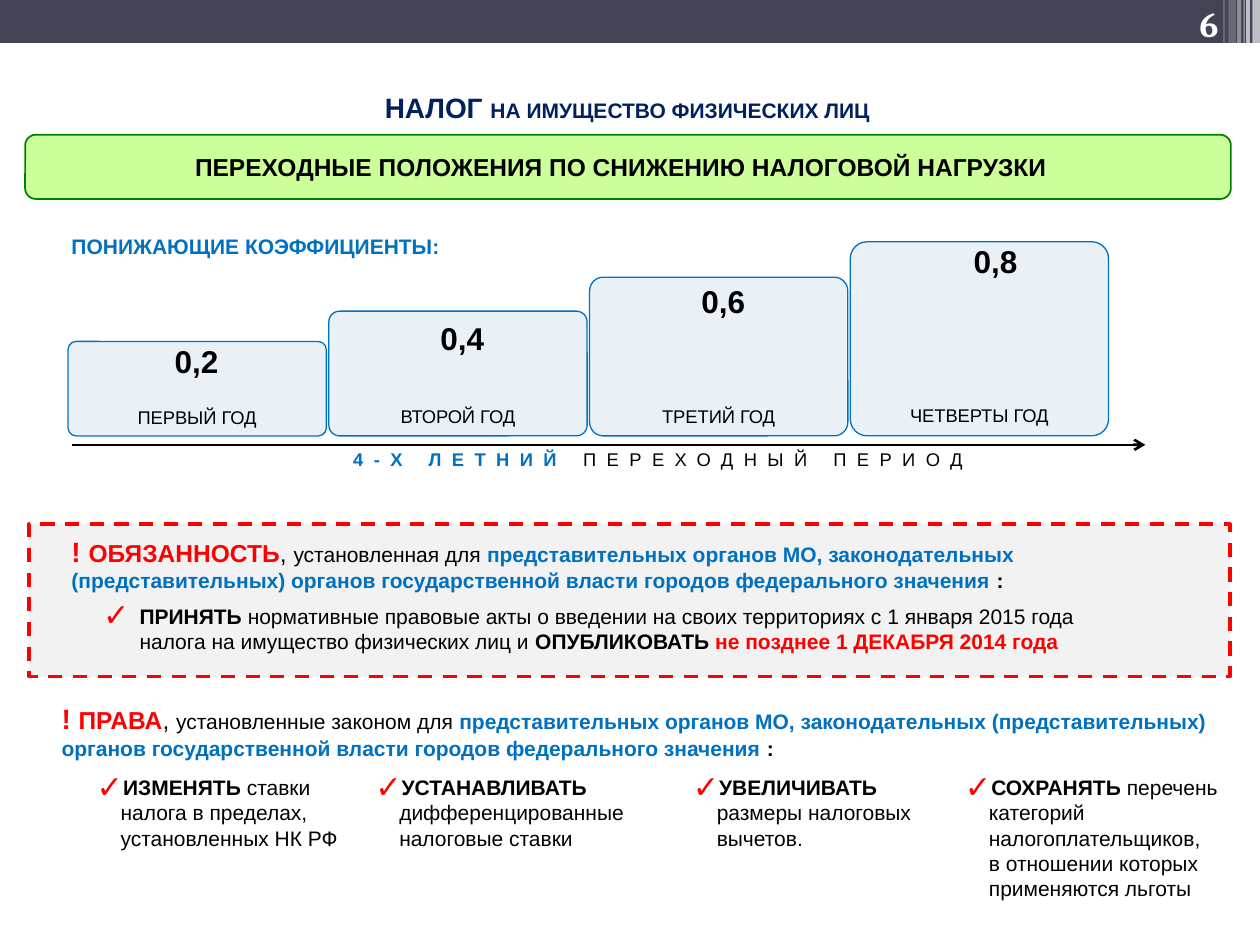
"""Build the slide on transitional property tax rules for individuals."""
from dataclasses import dataclass

from lxml import etree
from pptx import Presentation
from pptx.dml.color import RGBColor
from pptx.enum.dml import MSO_LINE
from pptx.enum.shapes import MSO_CONNECTOR, MSO_SHAPE
from pptx.enum.text import MSO_ANCHOR, MSO_AUTO_SIZE, PP_ALIGN
from pptx.oxml.ns import qn
from pptx.util import Pt

RECT, ROUND = MSO_SHAPE.RECTANGLE, MSO_SHAPE.ROUNDED_RECTANGLE
TOP, MIDDLE, BOTTOM = MSO_ANCHOR.TOP, MSO_ANCHOR.MIDDLE, MSO_ANCHOR.BOTTOM
LEFT, CENTER, RIGHT = PP_ALIGN.LEFT, PP_ALIGN.CENTER, PP_ALIGN.RIGHT
STRAIGHT, DASH, NO_AUTOFIT = MSO_CONNECTOR.STRAIGHT, MSO_LINE.DASH, MSO_AUTO_SIZE.NONE


@dataclass(frozen=True)
class Theme:
    font: str = "Arial"
    number_font: str = "Cambria"
    header: str = "424456"
    white: str = "FFFFFF"
    black: str = "000000"
    navy: str = "002060"
    blue: str = "0070C0"
    red: str = "FF0000"
    green: str = "008000"
    lime: str = "CCFF99"
    ice: str = "EAF1F6"
    grey: str = "F2F2F2"
    page: float = 20
    value: float = 18
    lead: float = 16
    heading: float = 14
    body: float = 12
    label: float = 10.5


class Deck:
    def __init__(self, theme, width, height):
        self.theme = theme
        self.prs = Presentation()
        self.prs.slide_width, self.prs.slide_height = Pt(width), Pt(height)
        self.s = self.prs.slides.add_slide(self.prs.slide_layouts[5])

    def apply(self, obj, values):
        for name, value in values.items():
            setattr(obj, name, value)

    def fill_text(self, sp, runs, align=LEFT, anchor=TOP, insets=(7.2, 3.6, 7.2, 3.6),
                  hang=0, spacing=0):
        tf = sp.text_frame
        sides = ("margin_left", "margin_top", "margin_right", "margin_bottom")
        self.apply(tf, {"auto_size": NO_AUTOFIT, "word_wrap": True, "vertical_anchor": anchor,
                        **dict(zip(sides, map(Pt, insets)))})
        p = tf.paragraphs[0]
        p.alignment = align
        if hang:
            self.bullet(p, hang)
        for text, size, color, bold, *font in runs:
            for i, line in enumerate(text.split("\n")):
                if i:
                    p.add_line_break()
                r = p.add_run()
                r.text = line
                self.apply(r.font, {"size": Pt(size), "bold": bold,
                                    "name": font[0] if font else self.theme.font})
                r.font.color.rgb = RGBColor.from_string(color)
                if spacing:
                    r._r.get_or_add_rPr().set("spc", str(spacing * 100))

    def bullet(self, p, hang):
        pPr = p._p.get_or_add_pPr()
        pPr.set("marL", str(Pt(hang)))
        pPr.set("indent", str(-Pt(hang)))
        color = etree.SubElement(pPr, qn("a:buClr"))
        etree.SubElement(color, qn("a:srgbClr"), val=self.theme.red)
        etree.SubElement(pPr, qn("a:buSzPct"), val="150000")
        etree.SubElement(pPr, qn("a:buFont"), typeface=self.theme.font)
        etree.SubElement(pPr, qn("a:buChar"), char="✓")

    def title(self, box, runs, **style):
        sp = self.s.shapes.title
        self.apply(sp, dict(zip(("left", "top", "width", "height"), map(Pt, box))))
        self.fill_text(sp, runs, **style)

    def text(self, box, runs, **style):
        self.fill_text(self.s.shapes.add_textbox(*map(Pt, box)), runs, **style)

    def shape(self, kind, box, fill=None, line=None, weight=1, dash=None, alpha=None,
              corner=None, runs=(), **style):
        sp = self.s.shapes.add_shape(kind, *map(Pt, box))
        sp.shadow.inherit = False
        if fill:
            sp.fill.solid()
            sp.fill.fore_color.rgb = RGBColor.from_string(fill)
        else:
            sp.fill.background()
        if alpha:
            color = sp._element.spPr.find(".//" + qn("a:srgbClr"))
            etree.SubElement(color, qn("a:alpha"), val=str(alpha * 1000))
        if line:
            sp.line.color.rgb = RGBColor.from_string(line)
            self.apply(sp.line, {"width": Pt(weight), "dash_style": dash})
        else:
            sp.line.fill.background()
        if corner:
            sp.adjustments[0] = corner
        if runs:
            self.fill_text(sp, runs, **style)

    def arrow(self, x1, y1, x2, y2, color, weight):
        sp = self.s.shapes.add_connector(STRAIGHT, *map(Pt, (x1, y1, x2, y2)))
        sp.line.color.rgb = RGBColor.from_string(color)
        sp.line.width = Pt(weight)
        spPr = sp._element.spPr
        etree.SubElement(spPr.find(qn("a:ln")), qn("a:tailEnd"), type="arrow")
        etree.SubElement(spPr, qn("a:effectLst"))


def add_header(deck):
    t = deck.theme
    deck.shape(RECT, (0, 0, 720, 24.5), t.header)
    stripes = [(715.7, 4.3, 49, 65), (712.1, 2.2, 49, 65), (710.6, 0.7, 49, 60),
               (707, 2.2, 49, 40), (702, 4.3, 46, 20), (699.1, 0.7, 46, 30)]
    for x, width, height, alpha in stripes:
        deck.shape(RECT, (x, 0, width, height), t.white, alpha=alpha)
    deck.text((620.6, 0, 82.8, 28.8), [("6", t.page, t.white, True, t.number_font)],
              align=RIGHT, anchor=BOTTOM)
    deck.title((14.4, 49, 688.3, 31.7),
               [("НАЛОГ ", t.lead, t.navy, True),
                ("НА ИМУЩЕСТВО ФИЗИЧЕСКИХ ЛИЦ", t.body, t.navy, True)],
               align=CENTER, insets=(2.9,) * 4)
    deck.shape(ROUND, (14.4, 77, 689, 36.7), t.lime, t.green,
               runs=[("ПЕРЕХОДНЫЕ ПОЛОЖЕНИЯ ПО СНИЖЕНИЮ НАЛОГОВОЙ НАГРУЗКИ",
                      t.heading, t.black, True)],
               align=CENTER, anchor=MIDDLE, insets=(7.2, 3.6, 15.2, 3.6))


def add_steps(deck):
    t = deck.theme
    bottom, left, width, step = 249.1, 38.9, 147.6, 149
    deck.shape(ROUND, (32.4, 126.7, 342, 28),
               runs=[("ПОНИЖАЮЩИЕ КОЭФФИЦИЕНТЫ:", t.body, t.blue, True)], anchor=MIDDLE)
    steps = [("ПЕРВЫЙ ГОД", "0,2", 195.1, 112.3, 192.2),
             ("ВТОРОЙ ГОД", "0,4", 177.8, 264.2, 178.6),
             ("ТРЕТИЙ ГОД", "0,6", 158.4, 413.3, 157.7),
             ("ЧЕТВЕРТЫ ГОД", "0,8", 138.2, 568.8, 134.6)]
    for i, (year, value, top, center, value_top) in enumerate(steps):
        deck.shape(ROUND, (left + i * step, top, width, bottom - top), t.ice, t.blue, 0.75,
                   corner=0.086, runs=[(year, t.label, t.black, False)],
                   align=CENTER, anchor=BOTTOM, insets=(8.6, 0, 8.6, 2.9))
        deck.text((center - 30, value_top, 60, 28.8), [(value, t.value, t.black, True)],
                  align=CENTER)
    deck.arrow(41, 254.2, 654.5, 254.2, t.black, 1.5)
    deck.text((149, 252.7, 454.3, 20.9),
              [("4-Х ЛЕТНИЙ ", t.label, t.blue, True),
               ("ПЕРЕХОДНЫЙ ПЕРИОД", t.label, t.black, False)],
              align=CENTER, spacing=6)


def add_statement(deck, box, word, link):
    t = deck.theme
    deck.text(box, [("! ", t.lead, t.red, True), (word, t.heading, t.red, True),
                    (", ", t.heading, t.black, False), (link, t.body, t.black, False),
                    ("представительных органов МО, законодательных (представительных) органов "
                     "государственной власти городов федерального значения ",
                     t.body, t.blue, True),
                    (":", t.body, t.black, True)])


def add_duty(deck):
    t = deck.theme
    deck.shape(RECT, (16.6, 299.5, 686.2, 87.1), t.grey, t.red, 2, DASH)
    add_statement(deck, (33.8, 301.7, 676, 41), "ОБЯЗАННОСТЬ", "установленная для ")
    deck.text((51.8, 341.3, 647.3, 36),
              [("ПРИНЯТЬ ", t.body, t.black, True),
               ("нормативные правовые акты о введении на своих территориях с 1 января 2015 года\n"
                "налога на имущество физических лиц и ", t.body, t.black, False),
               ("ОПУБЛИКОВАТЬ ", t.body, t.black, True),
               ("не позднее 1 ДЕКАБРЯ 2014 года", t.body, t.red, True)], hang=20.9)


def add_rights(deck):
    t = deck.theme
    add_statement(deck, (28.1, 397.4, 671, 41), "ПРАВА", "установленные законом для ")
    rights = [
        (48.2, 158.4, 51, "ИЗМЕНЯТЬ ", "ставки налога в пределах, установленных НК РФ"),
        (207.4, 172, 51, "УСТАНАВЛИВАТЬ ", "дифференцированные налоговые ставки"),
        (388.8, 144.7, 51, "УВЕЛИЧИВАТЬ ", "размеры налоговых вычетов."),
        (544.3, 159, 80, "СОХРАНЯТЬ ", "перечень категорий налогоплательщиков,\n"
                                       "в отношении которых применяются льготы")]
    for x, width, height, verb, rest in rights:
        deck.text((x, 439.2, width, height),
                  [(verb, t.body, t.black, True), (rest, t.body, t.black, False)], hang=13.7)


def main():
    deck = Deck(Theme(), 720, 540)
    for add_part in (add_header, add_steps, add_duty, add_rights):
        add_part(deck)
    deck.prs.save("out.pptx")


if __name__ == "__main__":
    main()
